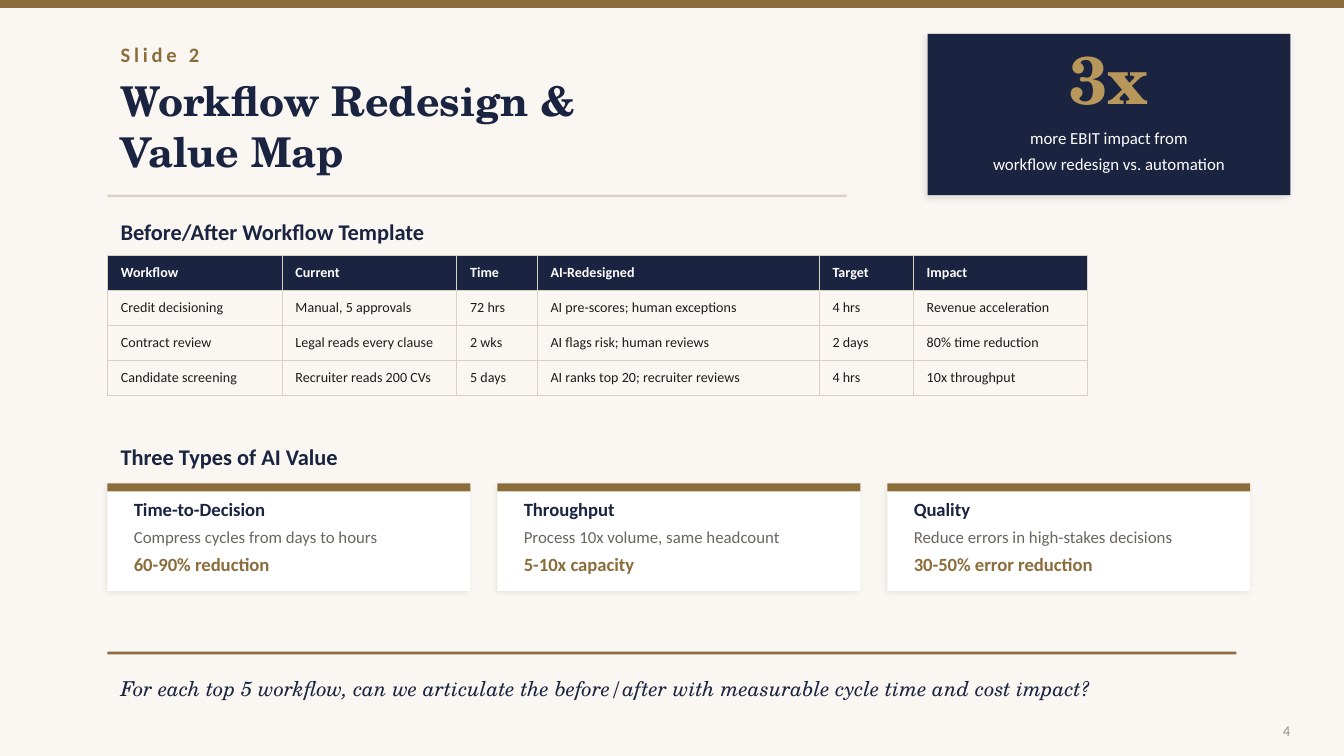
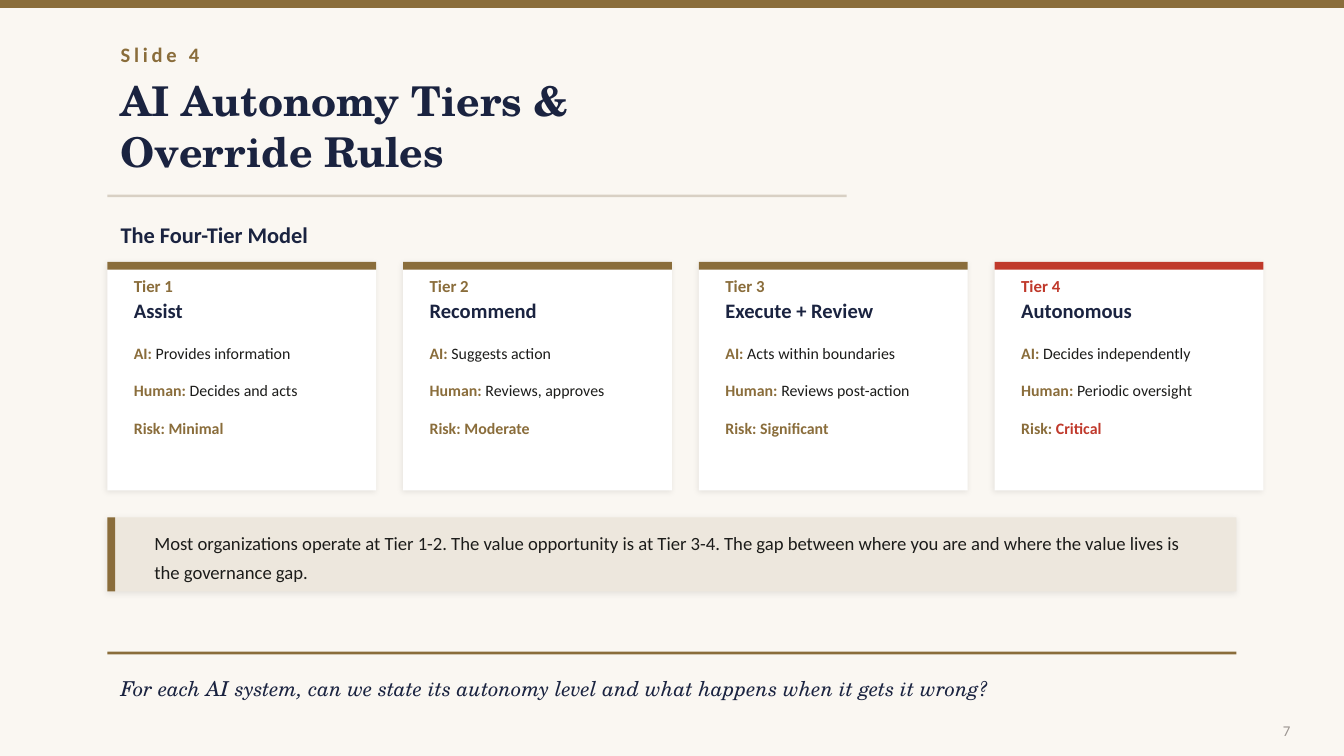
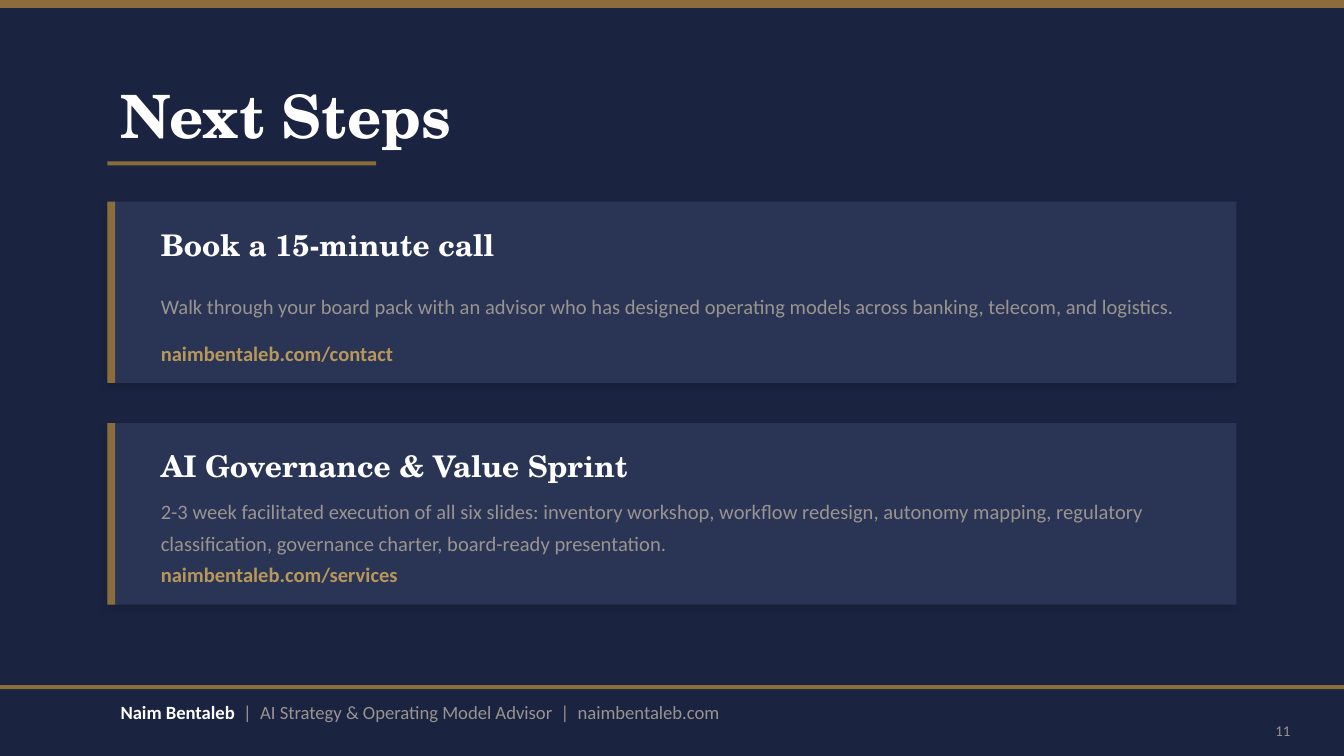
from dataclasses import dataclass, replace
from typing import NamedTuple

from lxml import etree
from pptx import Presentation
from pptx import util as u
from pptx.dml.color import RGBColor
from pptx.enum import shapes, text
from pptx.oxml.ns import qn


# Theme: colours, fonts and type styles
class Style(NamedTuple):
    size: float
    color: str
    bold: bool = False
    italic: bool = False
    font: str = "Calibri"
    tracking: int = 0


@dataclass(frozen=True)
class Theme:
    paper: str = "FAF7F2"
    navy: str = "1A2340"
    panel: str = "2A3555"
    bronze: str = "8A6D3B"
    gold: str = "B8975A"
    red: str = "C0392B"
    white: str = "FFFFFF"
    sand: str = "EDE7DD"
    line: str = "D8D0C4"
    ink: str = "1C1C1A"
    gray: str = "6B6560"
    muted: str = "9A9490"
    serif: str = "TeX Gyre Schola"

    def heading(self, size: float, color: str) -> Style:
        return Style(size, color, bold=True, font=self.serif)


T = Theme()
KICKER = Style(11, T.bronze, bold=True, tracking=200)
TITLE = T.heading(22, T.navy)
CLOSING_TITLE = T.heading(32, T.white)
STAT = T.heading(36, T.gold)
STAT_NOTE = Style(9, T.white)
SECTION = Style(12, T.navy, bold=True)
TABLE_HEAD = Style(7.5, T.white, bold=True)
TABLE_BODY = Style(7.5, T.ink)
CARD_NAME = Style(10, T.navy, bold=True)
CARD_NOTE = Style(9, T.gray)
CARD_RESULT = Style(10, T.bronze, bold=True)
TIER_LABEL = Style(9, T.bronze, bold=True)
TIER_NAME = Style(11, T.navy, bold=True)
FIELD = Style(8.5, T.bronze, bold=True)
FIELD_VALUE = Style(8.5, T.ink)
CALLOUT = Style(10, T.ink)
QUESTION = Style(11, T.navy, italic=True, font=T.serif)
PAGE = Style(8, T.muted)
STEP_NAME = T.heading(16, T.white)
STEP_NOTE = Style(11, T.muted)
STEP_LINK = Style(11, T.gold, bold=True)
AUTHOR = Style(10, T.white, bold=True)
AUTHOR_NOTE = Style(10, T.muted)


# Geometry, in centimetres
class Box(NamedTuple):
    x: float
    y: float
    w: float
    h: float

    def emu(self) -> list[int]:
        return [u.Cm(v) for v in self]


class Shadow(NamedTuple):
    alpha: int
    blur: float
    dist: float


class Run(NamedTuple):
    text: str
    style: Style


SOFT = Shadow(8, 3, 1)
DEEP = Shadow(10, 4, 2)
WIDTH, HEIGHT = 25.4, 14.29
LEFT, CONTENT = 2.03, 21.34
BAR, RULE = 0.15, 0.05
INSET = 0.25
ALIGN = text.PP_ALIGN


# Content records
class ValueType(NamedTuple):
    name: str
    note: str
    result: str


class Tier(NamedTuple):
    name: str
    ai: str
    human: str
    risk: str
    critical: bool = False


class Step(NamedTuple):
    name: str
    note: str
    link: str


WORKFLOWS = [
    ("Workflow", "Current", "Time", "AI-Redesigned", "Target", "Impact"),
    ("Credit decisioning", "Manual, 5 approvals", "72 hrs",
     "AI pre-scores; human exceptions", "4 hrs", "Revenue acceleration"),
    ("Contract review", "Legal reads every clause", "2 wks",
     "AI flags risk; human reviews", "2 days", "80% time reduction"),
    ("Candidate screening", "Recruiter reads 200 CVs", "5 days",
     "AI ranks top 20; recruiter reviews", "4 hrs", "10x throughput"),
]
COLUMNS = (3.3, 3.3, 1.52, 5.33, 1.78, 3.3)
ROW = 0.66

VALUE_TYPES = [
    ValueType("Time-to-Decision", "Compress cycles from days to hours", "60-90% reduction"),
    ValueType("Throughput", "Process 10x volume, same headcount", "5-10x capacity"),
    ValueType("Quality", "Reduce errors in high-stakes decisions", "30-50% error reduction"),
]

TIERS = [
    Tier("Assist", "Provides information", "Decides and acts", "Minimal"),
    Tier("Recommend", "Suggests action", "Reviews, approves", "Moderate"),
    Tier("Execute + Review", "Acts within boundaries", "Reviews post-action", "Significant"),
    Tier("Autonomous", "Decides independently", "Periodic oversight", "Critical", True),
]

STEPS = [
    Step("Book a 15-minute call",
         "Walk through your board pack with an advisor who has designed operating models "
         "across banking, telecom, and logistics.",
         "naimbentaleb.com/contact"),
    Step("AI Governance & Value Sprint",
         "2-3 week facilitated execution of all six slides: inventory workshop, workflow "
         "redesign, autonomy mapping, regulatory classification, governance charter, "
         "board-ready presentation.",
         "naimbentaleb.com/services"),
]


# Drawing functions
def write(tf, paragraphs: list[list[Run]], align=ALIGN.LEFT, spacing: float | None = None) -> None:
    for i, runs in enumerate(paragraphs):
        p = tf.paragraphs[0] if i == 0 else tf.add_paragraph()
        p.alignment = align
        if spacing:
            p.line_spacing = spacing
        for run in runs:
            r = p.add_run()
            r.text = run.text
            st = run.style
            font = {"name": st.font, "size": u.Pt(st.size), "bold": st.bold, "italic": st.italic}
            for key, value in font.items():
                setattr(r.font, key, value)
            r.font.color.rgb = RGBColor.from_string(st.color)
            if st.tracking:
                r.font._element.set("spc", str(st.tracking))


def lines(content: str, style: Style) -> list[list[Run]]:
    return [[Run(line, style)] for line in content.split("\n")]


def set_frame(tf, anchor) -> None:
    frame = {"word_wrap": True, "auto_size": text.MSO_AUTO_SIZE.NONE, "vertical_anchor": anchor}
    for key, value in frame.items():
        setattr(tf, key, value)


def add_runs(s, box: Box, paragraphs: list[list[Run]], align=ALIGN.LEFT,
             spacing: float | None = None, anchor=text.MSO_ANCHOR.MIDDLE) -> None:
    tf = s.shapes.add_textbox(*box.emu()).text_frame
    set_frame(tf, anchor)
    write(tf, paragraphs, align, spacing)


def add_text(s, box: Box, content: str, style: Style, **options) -> None:
    add_runs(s, box, lines(content, style), **options)


def add_title(s, box: Box, content: str, style: Style, spacing: float | None = None) -> None:
    sp = s.shapes.title
    for key, value in zip(("left", "top", "width", "height"), box.emu()):
        setattr(sp, key, value)
    set_frame(sp.text_frame, text.MSO_ANCHOR.MIDDLE)
    write(sp.text_frame, lines(content, style), spacing=spacing)


def add_rect(s, box: Box, color: str, shadow: Shadow | None = None) -> None:
    sp = s.shapes.add_shape(shapes.MSO_SHAPE.RECTANGLE, *box.emu())
    sp.fill.solid()
    sp.fill.fore_color.rgb = RGBColor.from_string(color)
    sp.line.fill.background()
    sp.shadow.inherit = False
    if shadow:
        effects = sp._element.spPr.find(qn("a:effectLst"))
        outer = etree.SubElement(effects, qn("a:outerShdw"), {
            "blurRad": str(u.Pt(shadow.blur)), "dist": str(u.Pt(shadow.dist)),
            "dir": str(135 * 60000), "algn": "bl", "rotWithShape": "0"})
        black = etree.SubElement(outer, qn("a:srgbClr"), val="000000")
        etree.SubElement(black, qn("a:alpha"), val=str(shadow.alpha * 1000))


def add_card(s, box: Box, accent: str) -> None:
    add_rect(s, box, T.white, SOFT)
    add_rect(s, box._replace(h=BAR), accent)


def add_panel(s, box: Box, color: str, shadow: Shadow) -> None:
    add_rect(s, box, color, shadow)
    add_rect(s, box._replace(w=BAR), T.bronze)


def add_borders(cell) -> None:
    tc_pr = cell._tc.get_or_add_tcPr()
    for side in ("a:lnL", "a:lnR", "a:lnT", "a:lnB"):
        ln = etree.SubElement(tc_pr, qn(side), w=str(u.Pt(0.5)))
        fill = etree.SubElement(ln, qn("a:solidFill"))
        etree.SubElement(fill, qn("a:srgbClr"), val=T.line)


def add_workflow_table(s, x: float, y: float) -> None:
    box = Box(x, y, sum(COLUMNS), ROW * len(WORKFLOWS))
    table = s.shapes.add_table(len(WORKFLOWS), len(COLUMNS), *box.emu()).table
    table.horz_banding = False
    for column, width in zip(table.columns, COLUMNS):
        column.width = u.Cm(width)
    for i, values in enumerate(WORKFLOWS):
        table.rows[i].height = u.Cm(ROW)
        for j, value in enumerate(values):
            cell = table.cell(i, j)
            add_borders(cell)
            cell.vertical_anchor = text.MSO_ANCHOR.MIDDLE
            if i == 0:
                cell.fill.solid()
                cell.fill.fore_color.rgb = RGBColor.from_string(T.navy)
            else:
                cell.fill.background()
            write(cell.text_frame, lines(value, TABLE_BODY if i else TABLE_HEAD))


# Shared slide frames
def new_slide(prs, background: str, page: int):
    s = prs.slides.add_slide(prs.slide_layouts[5])
    s.background.fill.solid()
    s.background.fill.fore_color.rgb = RGBColor.from_string(background)
    add_rect(s, Box(0, 0, WIDTH, BAR), T.bronze)
    add_text(s, Box(23.37, 13.34, 1.27, 0.76), str(page), PAGE,
             align=ALIGN.RIGHT, anchor=text.MSO_ANCHOR.BOTTOM)
    return s


def content_slide(prs, page: int, kicker: str, title: str, question: str):
    s = new_slide(prs, T.paper, page)
    add_text(s, Box(LEFT, 0.64, 10.16, 0.76), kicker, KICKER)
    add_title(s, Box(LEFT, 1.27, 13.97, 2.16), title, TITLE, spacing=1.05)
    add_rect(s, Box(LEFT, 3.68, 13.97, RULE), T.line)
    add_rect(s, Box(LEFT, 12.32, CONTENT, RULE), T.bronze)
    add_text(s, Box(LEFT, 12.57, CONTENT, 0.89), question, QUESTION)
    return s


# Slides
def workflow_slide(prs) -> None:
    s = content_slide(prs, 4, "Slide 2", "Workflow Redesign &\nValue Map",
                      "For each top 5 workflow, can we articulate the before/after "
                      "with measurable cycle time and cost impact?")
    add_rect(s, Box(17.53, 0.64, 6.86, 3.05), T.navy, DEEP)
    add_text(s, Box(17.53, 0.76, 6.86, 1.4), "3x", STAT, align=ALIGN.CENTER)
    add_text(s, Box(17.78, 2.16, 6.35, 1.27),
             "more EBIT impact from\nworkflow redesign vs. automation", STAT_NOTE,
             align=ALIGN.CENTER, spacing=1.3)

    add_text(s, Box(LEFT, 4.06, 12.7, 0.64), "Before/After Workflow Template", SECTION)
    add_workflow_table(s, LEFT, 4.83)

    add_text(s, Box(LEFT, 8.26, 12.7, 0.76), "Three Types of AI Value", SECTION)
    for i, value in enumerate(VALUE_TYPES):
        card = Box(LEFT + i * 7.37, 9.14, 6.86, 2.03)
        add_card(s, card, T.bronze)
        x, w = card.x + INSET, card.w - 2 * INSET
        add_text(s, Box(x, card.y + 0.2, w, 0.56), value.name, CARD_NAME)
        add_text(s, Box(x, card.y + 0.76, w, 0.51), value.note, CARD_NOTE)
        add_text(s, Box(x, card.y + 1.27, w, 0.51), value.result, CARD_RESULT)


def tiers_slide(prs) -> None:
    s = content_slide(prs, 7, "Slide 4", "AI Autonomy Tiers &\nOverride Rules",
                      "For each AI system, can we state its autonomy level "
                      "and what happens when it gets it wrong?")
    add_text(s, Box(LEFT, 4.06, 10.16, 0.76), "The Four-Tier Model", SECTION)
    for i, tier in enumerate(TIERS):
        accent = T.red if tier.critical else T.bronze
        card = Box(LEFT + i * 5.59, 4.95, 5.08, 4.32)
        add_card(s, card, accent)
        x, w = card.x + INSET, card.w - 2 * INSET
        add_text(s, Box(x, card.y + 0.2, w, 0.51), f"Tier {i + 1}",
                 TIER_LABEL._replace(color=accent))
        add_text(s, Box(x, card.y + 0.64, w, 0.56), tier.name, TIER_NAME)
        fields = [("AI: ", tier.ai, FIELD_VALUE), ("Human: ", tier.human, FIELD_VALUE),
                  ("Risk: ", tier.risk, FIELD._replace(color=accent))]
        for j, (label, value, style) in enumerate(fields):
            add_runs(s, Box(x, card.y + 1.4 + j * 0.71, w, 0.64),
                     [[Run(label, FIELD), Run(value, style)]])

    callout = Box(LEFT, 9.78, CONTENT, 1.4)
    add_panel(s, callout, T.sand, SOFT)
    add_text(s, callout._replace(x=2.67, w=20.32),
             "Most organizations operate at Tier 1-2. The value opportunity is at Tier 3-4. "
             "The gap between where you are and where the value lives is the governance gap.",
             CALLOUT, spacing=1.3)


def next_steps_slide(prs) -> None:
    s = new_slide(prs, T.navy, 11)
    add_title(s, Box(LEFT, 1.27, 20.32, 1.78), "Next Steps", CLOSING_TITLE)
    add_rect(s, Box(LEFT, 3.05, 5.08, 0.08), T.bronze)
    for i, step in enumerate(STEPS):
        panel = Box(LEFT, 3.81 + i * 4.19, CONTENT, 3.43)
        add_panel(s, panel, T.panel, DEEP)
        x, w = 2.79, 19.81
        add_text(s, Box(x, panel.y + 0.3, w, 1.02), step.name, STEP_NAME)
        add_text(s, Box(x, panel.y + 1.27, w, 1.27), step.note, STEP_NOTE, spacing=1.3)
        add_text(s, Box(x, panel.y + 2.54, 10.16, 0.64), step.link, STEP_LINK)

    add_rect(s, Box(0, 12.95, WIDTH, 0.08), T.bronze)
    add_runs(s, Box(LEFT, 13.08, CONTENT, 0.76), [[
        Run("Naim Bentaleb", AUTHOR),
        Run("  |  AI Strategy & Operating Model Advisor  |  naimbentaleb.com", AUTHOR_NOTE)]])


def main() -> None:
    prs = Presentation()
    prs.slide_width, prs.slide_height = u.Cm(WIDTH), u.Cm(HEIGHT)
    workflow_slide(prs)
    tiers_slide(prs)
    next_steps_slide(prs)
    prs.save("out.pptx")


if __name__ == "__main__":
    main()
